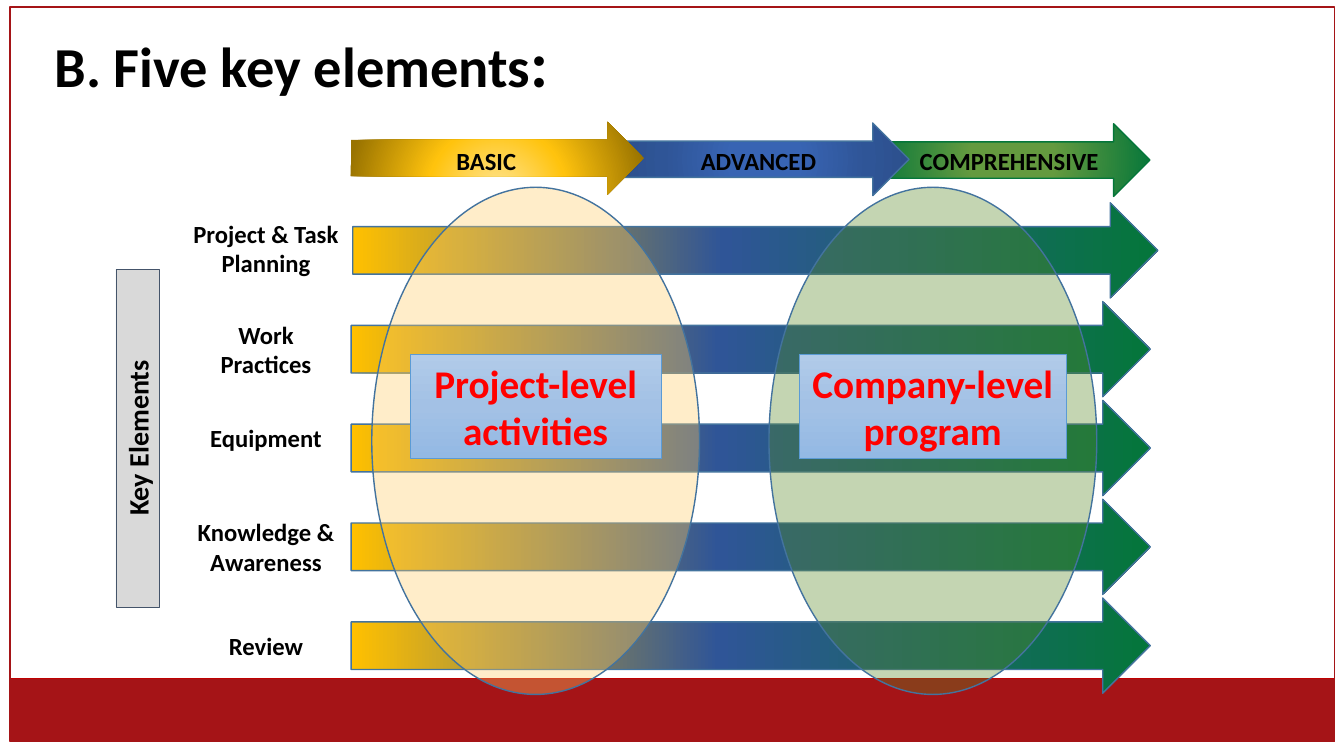
from lxml import etree
from pptx import Presentation
from pptx.dml.color import RGBColor
from pptx.enum.shapes import MSO_SHAPE
from pptx.enum.text import MSO_ANCHOR, PP_ALIGN
from pptx.oxml.ns import nsdecls, qn
from pptx.oxml import parse_xml
from pptx.util import Cm, Pt

RECTANGLE = MSO_SHAPE.RECTANGLE
ARROW = MSO_SHAPE.RIGHT_ARROW
OVAL = MSO_SHAPE.OVAL
TOP, MIDDLE, BOTTOM = MSO_ANCHOR.TOP, MSO_ANCHOR.MIDDLE, MSO_ANCHOR.BOTTOM
CENTER, LEFT = PP_ALIGN.CENTER, PP_ALIGN.LEFT

COLORS = {
    "black": "000000", "crimson": "A51417", "band_line": "C00000",
    "steel": "43739E", "green": "04763A", "leaf": "649A3F",
    "royal": "3864B3", "navy": "2F5597", "deep_navy": "2C4F8C",
    "cream": "FFE699", "amber": "FFC30D", "bronze": "997300",
    "gold": "FFC000", "gray": "D9D9D9", "slate": "44546A",
    "sand": "FFCC66", "olive": "588824", "red": "FF0000",
    "sky_light": "B1CBE9", "sky": "A3C1E5", "sky_dark": "93B9E4",
    "card_line": "5B9BD5",
}
LABEL_FONT = {"name": "Calibri", "size": Pt(17.6), "bold": True}

LINEAR = '<a:lin ang="{}" scaled="0"/>'
RADIAL = '<a:path path="circle"><a:fillToRect l="50000" t="{}" r="50000" b="{}"/></a:path>'
CENTERED = RADIAL.format(50000, 50000)
ROW_FILL = ([(0, "gold"), (46, "navy"), (100, "green")], LINEAR.format(0))
CARD_FILL = ([(0, "sky_light"), (50, "sky"), (100, "sky_dark")], LINEAR.format(5400000))

# Stages: label, arrow left, top, width, label left, fill, line; drawn back to front
STAGES = [
    ("COMPREHENSIVE", 13.21, 0.05, 6.93, 13.79,
     ([(30, "leaf"), (100, "green")], CENTERED), "green"),
    ("ADVANCED", 6.81, 0.03, 7.26, 7.47,
     ([(0, "royal"), (23, "royal"), (69, "navy"), (97, "deep_navy")], CENTERED), "steel"),
    ("BASIC", 0, 0, 7.39, 0.61,
     ([(0, "cream"), (46, "amber"), (100, "bronze")], RADIAL.format(130000, -30000)), None),
]
# Elements: label, vertical label shift, arrow left shift, arrow width
ELEMENTS = [
    ("Project & Task Planning", -0.06, 0.04, 20.29),
    ("Work\vPractices", 0, 0, 20.14),
    ("Equipment", -0.25, 0, 20.14),
    ("Knowledge & Awareness", 0, 0, 20.14),
    ("Review", 0, 0, 20.14),
]


def rgb(name):
    return RGBColor.from_string(COLORS[name])


def set_gradient(shape, stops, direction):
    shape.fill.background()
    stop_xml = "".join(
        f'<a:gs pos="{position * 1000}"><a:srgbClr val="{COLORS[name]}"/></a:gs>'
        for position, name in stops)
    gradient = parse_xml(f'<a:gradFill {nsdecls("a")} rotWithShape="1">'
                         f'<a:gsLst>{stop_xml}</a:gsLst>{direction}</a:gradFill>')
    properties = shape.element.spPr
    properties.replace(properties.find(qn("a:noFill")), gradient)


def add_shape(slide, kind, box, fill=None, line=None, line_width=1, alpha=None):
    shape = slide.shapes.add_shape(kind, *map(Cm, box))
    shape.shadow.inherit = False
    if fill is None:
        shape.fill.background()
    elif isinstance(fill, tuple):
        set_gradient(shape, *fill)
    else:
        shape.fill.solid()
        shape.fill.fore_color.rgb = rgb(fill)
    if alpha is not None:
        color = shape.element.spPr.find(qn("a:solidFill"))[0]
        etree.SubElement(color, qn("a:alpha"), val=str(alpha * 1000))
    if line:
        shape.line.color.rgb = rgb(line)
        shape.line.width = Pt(line_width)
    else:
        shape.line.fill.background()
    return shape


def format_font(font, values, color="black"):
    for name, value in values.items():
        setattr(font, name, value)
    font.color.rgb = rgb(color)


def write_text(shape, text, anchor=MIDDLE, size=17.6, color="black"):
    frame = shape.text_frame
    frame.word_wrap = True
    frame.vertical_anchor = anchor
    paragraph = frame.paragraphs[0]
    paragraph.text = text
    paragraph.alignment = CENTER
    format_font(paragraph.font, {**LABEL_FONT, "size": Pt(size)}, color)
    for run in paragraph.runs:
        format_font(run.font, {**LABEL_FONT, "size": Pt(size)}, color)


def add_label(slide, box, text, anchor=MIDDLE):
    write_text(slide.shapes.add_textbox(*map(Cm, box)), text, anchor)


def add_frame(slide, left, top, width, height):
    band_height = 1.57
    add_shape(slide, RECTANGLE, (left, top + height - band_height, width, band_height),
              "crimson", "band_line")
    add_shape(slide, RECTANGLE, (left, top, width, height), line="crimson")


def add_title(slide, left, top, width, height):
    title = slide.shapes.title
    place = {"left": left, "top": top, "width": width, "height": height}
    for name, value in place.items():
        setattr(title, name, Cm(value))
    title.text_frame.vertical_anchor = BOTTOM
    title.text_frame.word_wrap = True
    paragraph = title.text_frame.paragraphs[0]
    paragraph.alignment = LEFT
    paragraph.line_spacing = 0.7
    for text, size in (("B. Five key elements", 40.3), (":", 46.5)):
        run = paragraph.add_run()
        run.text = text
        format_font(run.font, {**LABEL_FONT, "size": Pt(size)})


def add_stages(slide, left, top, height):
    for _, shift, drop, width, _, fill, line in STAGES:
        add_shape(slide, ARROW, (left + shift, top + drop, width, height), fill, line)
    for text, _, _, _, shift, _, _ in STAGES:
        add_label(slide, (left + shift, top + 0.49, 5.61, 0.81), text, TOP)


def add_elements(slide, left, top, pitch):
    label_width, label_height, arrow_height = 4.29, 1.78, 2.4
    for row, (text, label_shift, arrow_shift, arrow_width) in enumerate(ELEMENTS):
        row_top = top + row * pitch
        add_shape(slide, ARROW, (left + label_width + arrow_shift, row_top,
                                 arrow_width, arrow_height), ROW_FILL, "steel")
        label_top = row_top + (arrow_height - label_height) / 2 + label_shift
        add_label(slide, (left, label_top, label_width, label_height), text)


def add_side_bar(slide, left, top, width, height):
    # The bar is laid out horizontally, then turned about its centre
    box = (left + (width - height) / 2, top + (height - width) / 2, height, width)
    bar = add_shape(slide, RECTANGLE, box, "gray", "slate", 0.25)
    bar.rotation = 270
    write_text(bar, "Key Elements", size=20)


def add_level(slide, left, top, text, color, card_shift, card_width):
    add_shape(slide, OVAL, (left, top, 8.26, 12.78), color, "steel", alpha=35)
    card = add_shape(slide, RECTANGLE, (left + card_shift, top + 4.2, card_width, 2.64),
                     CARD_FILL, "card_line", 0.5)
    write_text(card, text, TOP, 28, "red")


def main():
    presentation = Presentation()
    presentation.slide_width, presentation.slide_height = Cm(33.87), Cm(19.05)
    slide = presentation.slides.add_slide(presentation.slide_layouts[5])
    add_frame(slide, 0.25, 0.18, 33.38, 18.49)
    add_title(slide, 1.12, 0.79, 29.21, 1.83)
    add_stages(slide, 8.84, 3.07, 1.83)
    add_elements(slide, 4.56, 5.11, 2.49)
    add_side_bar(slide, 2.92, 6.78, 1.09, 8.51)
    add_level(slide, 9.37, 4.72, "Project-level activities", "sand", 0.97, 6.32)
    add_level(slide, 19.38, 4.72, "Company-level program", "olive", 0.76, 6.73)
    presentation.save("out.pptx")


if __name__ == "__main__":
    main()
